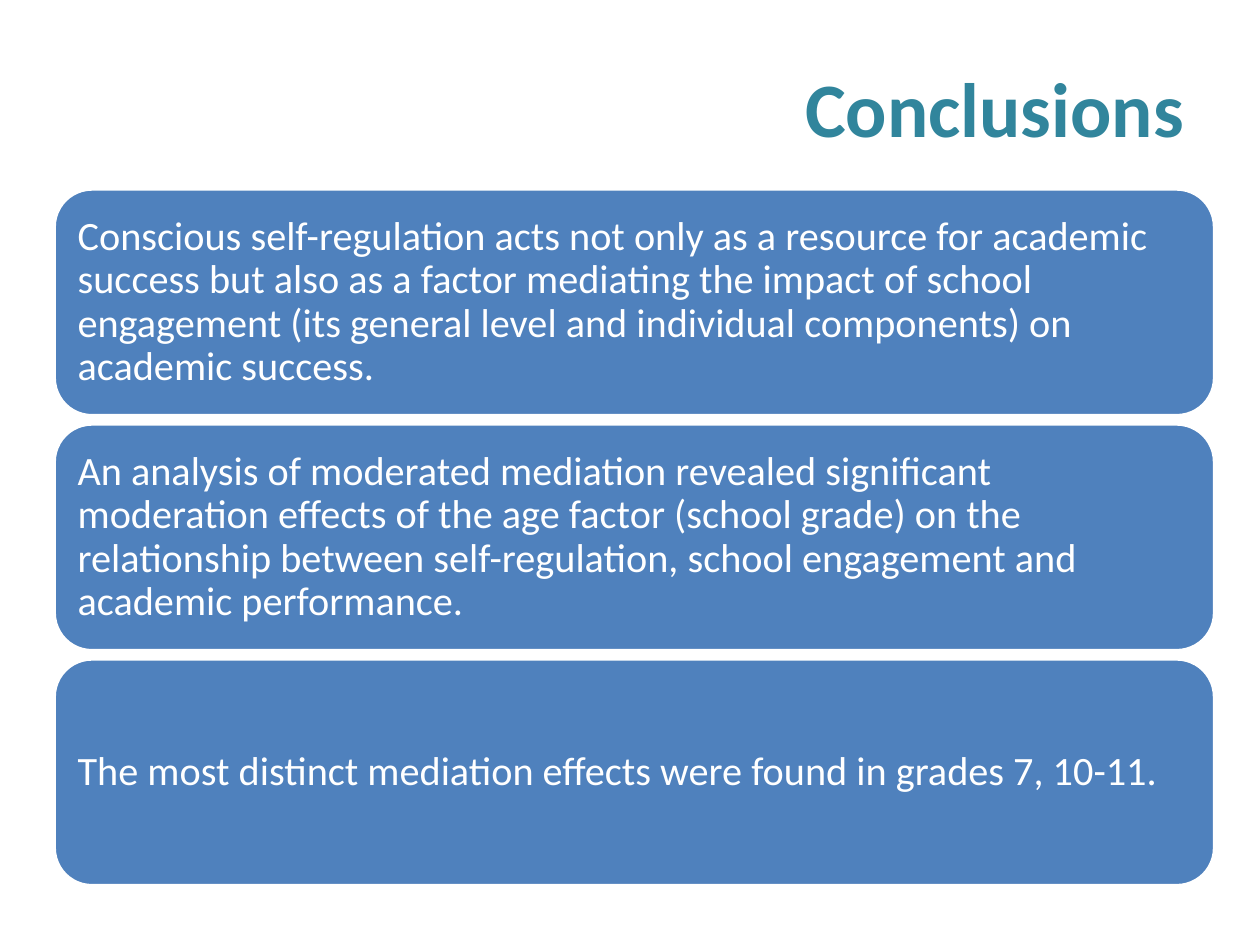
from dataclasses import dataclass

from pptx import Presentation
from pptx.dml.color import RGBColor
from pptx.enum.shapes import MSO_SHAPE
from pptx.enum.text import MSO_ANCHOR, PP_ALIGN
from pptx.util import Inches, Pt

LEFT, TOP, WIDTH, HEIGHT, STEP = 0.43, 1.5, 9.21, 1.8, 1.865
FRAME = {
    "word_wrap": True,
    "vertical_anchor": MSO_ANCHOR.MIDDLE,
    "margin_left": Inches(0.1),
    "margin_right": Inches(0.1),
    "margin_top": Inches(0.1),
    "margin_bottom": Inches(0.1),
}
HEAD = {"name": "Calibri", "size": Pt(44), "bold": True}
BODY = {"name": "Calibri", "size": Pt(23), "bold": False}


@dataclass
class Card:
    """One conclusion and its place in the stack."""

    row: int
    text: str


CARDS = [
    Card(0, "Conscious self-regulation acts not only as a resource for academic "
            "success but also as a factor mediating the impact of school engagement "
            "(its general level and individual components) on academic success."),
    Card(1, "An analysis of moderated mediation revealed significant moderation "
            "effects of the age factor (school grade) on the relationship between "
            "self-regulation, school engagement and academic performance."),
    Card(2, "The most distinct mediation effects were found in grades 7, 10-11."),
]


def paint(target, color: str) -> None:
    """Set a colour format from a hex string."""
    target.rgb = RGBColor.from_string(color)


def style(target, values: dict) -> None:
    """Set each attribute from a dict of format values."""
    for name, value in values.items():
        setattr(target, name, value)


def write(shape, text: str, font: dict, color: str, para: dict) -> None:
    """Fill a shape with one formatted paragraph."""
    frame = shape.text_frame
    style(frame, FRAME)
    line = frame.paragraphs[0]
    style(line, para)
    run = line.add_run()
    run.text = text
    style(run.font, font)
    paint(run.font.color, color)


def draw_title(slide, text: str) -> None:
    """Draw the slide heading."""
    box = slide.shapes.add_textbox(Inches(0.5), Inches(0.3), Inches(9), Inches(1.09))
    write(box, text, HEAD, "31859C", {"alignment": PP_ALIGN.RIGHT})


def draw_card(slide, card: Card) -> None:
    """Draw one rounded card with its text."""
    shape = slide.shapes.add_shape(
        MSO_SHAPE.ROUNDED_RECTANGLE, Inches(LEFT), Inches(TOP + card.row * STEP),
        Inches(WIDTH), Inches(HEIGHT))
    shape.shadow.inherit = False
    shape.fill.solid()
    paint(shape.fill.fore_color, "4F81BD")
    paint(shape.line.color, "FFFFFF")
    shape.line.width = Pt(2)
    write(shape, card.text, BODY, "FFFFFF",
          {"alignment": PP_ALIGN.LEFT, "line_spacing": 0.9})


def main() -> None:
    """Build and save the slide."""
    deck = Presentation()
    deck.slide_width, deck.slide_height = Inches(10), Inches(7.5)
    slide = deck.slides.add_slide(deck.slide_layouts[6])
    draw_title(slide, "Conclusions")
    for card in CARDS:
        draw_card(slide, card)
    deck.save("out.pptx")


if __name__ == "__main__":
    main()
